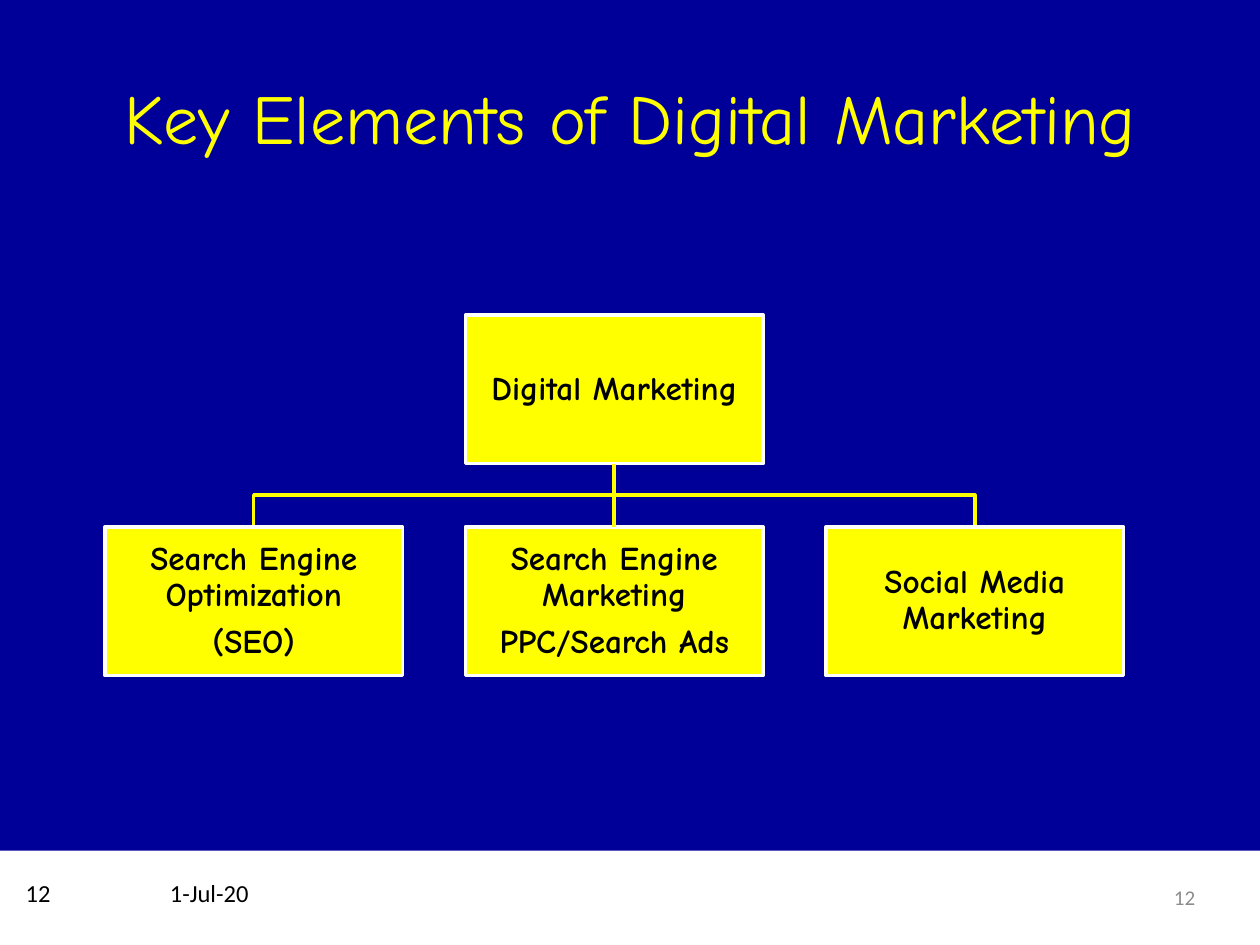
from dataclasses import dataclass

from lxml.etree import SubElement
from pptx import Presentation
from pptx.dml.color import RGBColor
from pptx.enum.shapes import MSO_CONNECTOR as Connector, MSO_SHAPE as Shape
from pptx.enum.text import MSO_ANCHOR as Anchor, PP_ALIGN as Align
from pptx.oxml.ns import qn
from pptx.util import Pt


@dataclass(frozen=True)
class Theme:
    navy: RGBColor = RGBColor(0x00, 0x00, 0x99)
    yellow: RGBColor = RGBColor(0xFF, 0xFF, 0x00)
    white: RGBColor = RGBColor(0xFF, 0xFF, 0xFF)
    black: RGBColor = RGBColor(0x00, 0x00, 0x00)
    grey: RGBColor = RGBColor(0x8C, 0x8C, 0x8C)
    display_font: str = "Comic Neue"
    footer_font: str = "Calibri"
    title_size: float = 40
    box_size: float = 19
    footer_size: float = 14
    number_size: float = 12
    line_width: float = 2


@dataclass(frozen=True)
class Node:
    lines: tuple[str, ...]
    left: float
    top: float

    @property
    def center(self) -> float:
        return self.left + NODE_WIDTH / 2


@dataclass(frozen=True)
class FooterItem:
    text: str
    left: float
    top: float
    width: float
    height: float
    size: float
    color: RGBColor
    align: Align
    anchor: Anchor


THEME = Theme()
PAGE_WIDTH, PAGE_HEIGHT, FOOTER_HEIGHT = 720, 540, 54
NODE_WIDTH, NODE_HEIGHT = 170, 85
COLUMN_LEFT, COLUMN_STEP = 60, 206
ROOT_TOP, CHILD_TOP = 180, 301

ROOT = Node(("Digital Marketing",), COLUMN_LEFT + COLUMN_STEP, ROOT_TOP)
CHILD_LINES = (
    ("Search Engine Optimization", "(SEO)"),
    ("Search Engine Marketing", "PPC/Search Ads"),
    ("Social Media Marketing",),
)
CHILDREN = [
    Node(lines, COLUMN_LEFT + column * COLUMN_STEP, CHILD_TOP)
    for column, lines in enumerate(CHILD_LINES)
]
FOOTER = (
    FooterItem("1-Jul-20", 90, 498, 102, 24, THEME.footer_size, THEME.black,
               Align.LEFT, Anchor.TOP),
    FooterItem("12", 0, 498, 36, 24, THEME.footer_size, THEME.black,
               Align.RIGHT, Anchor.MIDDLE),
    FooterItem("12", 522, 498, 168, 29, THEME.number_size, THEME.grey,
               Align.RIGHT, Anchor.MIDDLE),
)


def style_paragraph(para, font_name: str, size: float, color: RGBColor,
                    align: Align, bold: bool = False) -> None:
    para.alignment = align
    para.font.name = font_name
    para.font.size = Pt(size)
    para.font.color.rgb = color
    para.font.bold = bold


def style_line(line, color: RGBColor) -> None:
    line.color.rgb = color
    line.width = Pt(THEME.line_width)


def add_title(page, text: str) -> None:
    title = page.shapes.title
    title.left, title.top, title.width, title.height = Pt(36), Pt(21.6), Pt(648), Pt(90)
    title.text_frame.text = text
    title.text_frame.vertical_anchor = Anchor.MIDDLE
    style_paragraph(title.text_frame.paragraphs[0], THEME.display_font,
                    THEME.title_size, THEME.yellow, Align.CENTER)


def add_footer_band(page) -> None:
    band = page.shapes.add_shape(Shape.RECTANGLE, 0, Pt(PAGE_HEIGHT - FOOTER_HEIGHT),
                                 Pt(PAGE_WIDTH), Pt(FOOTER_HEIGHT))
    band.shadow.inherit = False
    band.fill.solid()
    band.fill.fore_color.rgb = THEME.white
    band.line.fill.background()


def add_footer_item(page, item: FooterItem) -> None:
    box = page.shapes.add_textbox(Pt(item.left), Pt(item.top),
                                  Pt(item.width), Pt(item.height))
    frame = box.text_frame
    frame.word_wrap = True
    frame.vertical_anchor = item.anchor
    frame.text = item.text
    style_paragraph(frame.paragraphs[0], THEME.footer_font, item.size,
                    item.color, item.align)


def add_node(page, node: Node):
    box = page.shapes.add_shape(Shape.RECTANGLE, Pt(node.left), Pt(node.top),
                                Pt(NODE_WIDTH), Pt(NODE_HEIGHT))
    box.shadow.inherit = False
    box.fill.solid()
    box.fill.fore_color.rgb = THEME.yellow
    style_line(box.line, THEME.white)
    frame = box.text_frame
    frame.word_wrap = True
    frame.vertical_anchor = Anchor.MIDDLE
    frame.margin_left = frame.margin_right = Pt(1)
    frame.margin_top = frame.margin_bottom = Pt(1)
    frame.text = "\n".join(node.lines)
    for para in frame.paragraphs:
        para.line_spacing = 0.9
        para.space_after = Pt(THEME.box_size * 0.35)
        style_paragraph(para, THEME.display_font, THEME.box_size, THEME.black,
                        Align.CENTER, bold=True)
    return box


def add_elbow(page, parent: Node, child: Node) -> None:
    start = parent.top + NODE_HEIGHT
    middle = (start + child.top) / 2
    corners = [(parent.center, middle), (child.center, middle), (child.center, child.top)]
    builder = page.shapes.build_freeform(Pt(parent.center), Pt(start))
    builder.add_line_segments([(Pt(x), Pt(y)) for x, y in corners], close=False)
    elbow = builder.convert_to_shape()
    elbow.shadow.inherit = False
    elbow.fill.background()
    style_line(elbow.line, THEME.yellow)


def add_straight(page, parent_box, child_box) -> None:
    link = page.shapes.add_connector(Connector.STRAIGHT, 0, 0, 0, 0)
    link.begin_connect(parent_box, 2)
    link.end_connect(child_box, 0)
    style_line(link.line, THEME.yellow)
    SubElement(link._element.spPr, qn("a:effectLst"))


def main() -> None:
    deck = Presentation()
    deck.slide_width, deck.slide_height = Pt(PAGE_WIDTH), Pt(PAGE_HEIGHT)
    page = deck.slides.add_slide(deck.slide_layouts[5])
    page.background.fill.solid()
    page.background.fill.fore_color.rgb = THEME.navy

    # Title and footer
    add_title(page, "Key Elements of Digital Marketing")
    add_footer_band(page)
    for item in FOOTER:
        add_footer_item(page, item)

    # Elbows lie behind the boxes they link
    for child in CHILDREN:
        if child.center != ROOT.center:
            add_elbow(page, ROOT, child)

    # Boxes, with a straight link to the one below the root
    root_box = add_node(page, ROOT)
    for child in CHILDREN:
        child_box = add_node(page, child)
        if child.center == ROOT.center:
            add_straight(page, root_box, child_box)

    deck.save("out.pptx")


if __name__ == "__main__":
    main()
